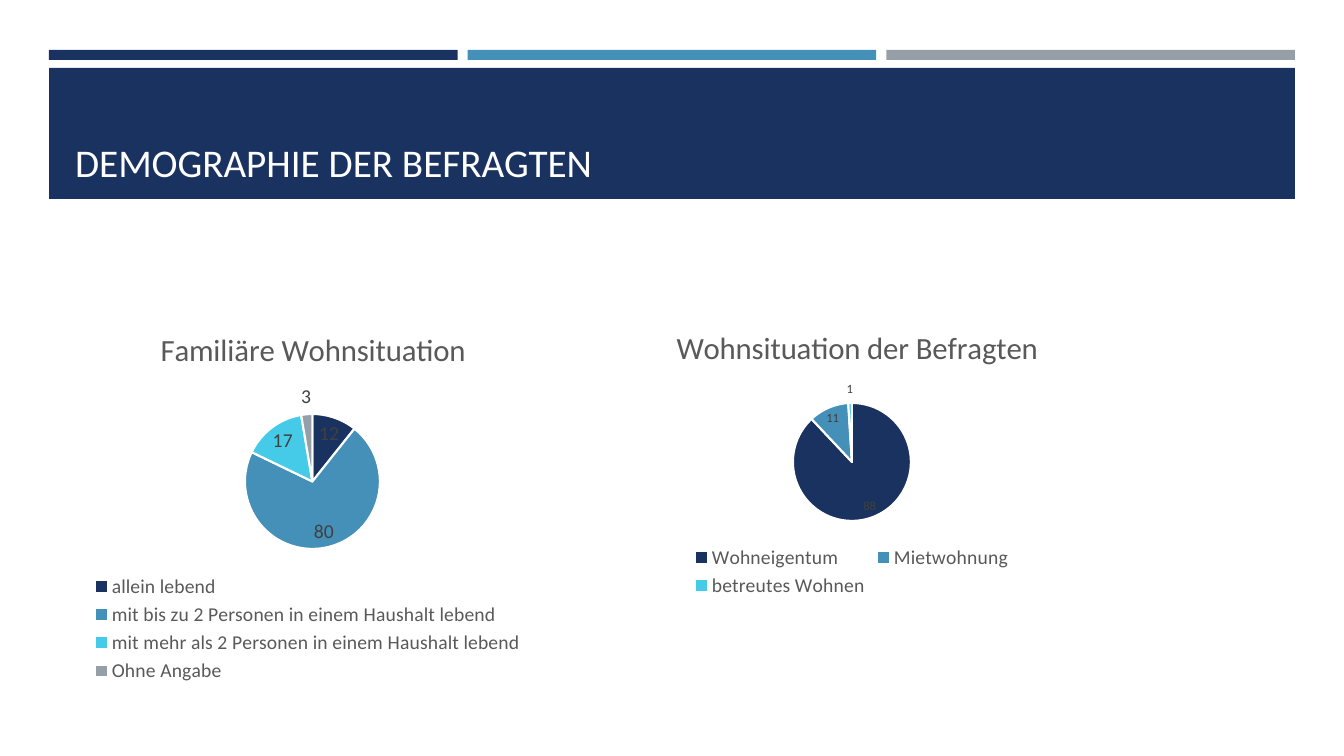
import pptx
import pptx.chart.data
import pptx.dml.color
import pptx.enum.chart
import pptx.enum.shapes
import pptx.enum.text
import pptx.oxml
import pptx.oxml.ns
import pptx.util

EMU_PER_PX = 914400 / 100.8
FONT = "Calibri"
NAVY, BLUE, CYAN, GREY = "1A3260", "4590B8", "45CBE8", "969FA7"
WHITE, TEXT_GREY, LABEL_GREY = "FFFFFF", "595959", "404040"


def px(length):
    """Turn a length in px into EMU."""
    return pptx.util.Emu(round(length * EMU_PER_PX))


def colour(hex_string):
    """Turn a hex string into a colour."""
    return pptx.dml.color.RGBColor.from_string(hex_string)


def style_font(font, size, hex_string):
    """Set typeface, size and colour of a font."""
    font.name = FONT
    font.size = pptx.util.Pt(size)
    font.bold = False
    font.color.rgb = colour(hex_string)


def add_bar(slide, left, top, width, height, fill):
    """Add a plain filled rectangle."""
    shape = slide.shapes.add_shape(
        pptx.enum.shapes.MSO_SHAPE.RECTANGLE, px(left), px(top), px(width), px(height))
    shape.shadow.inherit = False
    shape.fill.solid()
    shape.fill.fore_color.rgb = colour(fill)
    shape.line.fill.background()


def add_header(slide, left, top, width, text):
    """Add three accent bars over a title band."""
    gap, bar_height, band_top, band_height = 10, 10, top + 18, 131
    bar_width = (width - 2 * gap) / 3
    for index, fill in enumerate((NAVY, BLUE, GREY)):
        add_bar(slide, left + index * (bar_width + gap), top, bar_width, bar_height, fill)
    add_bar(slide, left, band_top, width, band_height, NAVY)

    title = slide.shapes.title
    title.left, title.top = px(left + 16), px(band_top + 10)
    title.width, title.height = px(width - 32), px(band_height - 19)
    slide.shapes._spTree.append(title._element)
    frame = title.text_frame
    frame.text = text
    frame.word_wrap = True
    frame.vertical_anchor = pptx.enum.text.MSO_ANCHOR.BOTTOM
    paragraph = frame.paragraphs[0]
    paragraph.alignment = pptx.enum.text.PP_ALIGN.LEFT
    style_font(paragraph.font, 28, WHITE)


def set_layout(parent, position, inner=False, **fractions):
    """Place a chart part by fractions of the chart box."""
    for old in parent.findall(pptx.oxml.ns.qn("c:layout")):
        parent.remove(old)
    settings = [("layoutTarget", "inner")] if inner else []
    settings += [("xMode", "edge"), ("yMode", "edge")]
    settings += [(name, round(value, 4)) for name, value in fractions.items()]
    children = "".join(f'<c:{name} val="{value}"/>' for name, value in settings)
    parent.insert(position, pptx.oxml.parse_xml(
        f'<c:layout {pptx.oxml.ns.nsdecls("c")}><c:manualLayout>'
        f'{children}</c:manualLayout></c:layout>'))


def add_pie(slide, box, heading, heading_at, pie_at, diameter, slices, label_size):
    """Add a titled pie with a legend below, parts placed relative to its box."""
    left, top, width, height = box
    data = pptx.chart.data.CategoryChartData()
    data.categories = [name for name, value, fill in slices]
    data.add_series("Series 1", [value for name, value, fill in slices])
    chart = slide.shapes.add_chart(
        pptx.enum.chart.XL_CHART_TYPE.PIE,
        px(left), px(top), px(width), px(height), data).chart
    style_font(chart.font, 14, TEXT_GREY)

    chart.has_title = True
    chart.chart_title.text_frame.text = heading
    style_font(chart.chart_title.text_frame.paragraphs[0].font, 22, TEXT_GREY)
    set_layout(chart.chart_title._element, 1,
               x=heading_at[0] / width, y=heading_at[1] / height)
    set_layout(chart._chartSpace.chart.plotArea, 0, inner=True,
               x=pie_at[0] / width, y=pie_at[1] / height,
               w=diameter / width, h=diameter / height)

    chart.has_legend = True
    chart.legend.position = pptx.enum.chart.XL_LEGEND_POSITION.BOTTOM
    chart.legend.include_in_layout = False
    style_font(chart.legend.font, 14, TEXT_GREY)

    plot = chart.plots[0]
    plot.vary_by_categories = True
    for index, (name, value, fill) in enumerate(slices):
        point_format = plot.series[0].points[index].format
        point_format.fill.solid()
        point_format.fill.fore_color.rgb = colour(fill)
        point_format.line.color.rgb = colour(WHITE)
        point_format.line.width = pptx.util.Pt(1.5)
    labels = plot.series[0].data_labels
    labels.show_value = True
    labels.position = pptx.enum.chart.XL_LABEL_POSITION.BEST_FIT
    style_font(labels.font, label_size, LABEL_GREY)


def build_slide(presentation):
    """Build the slide with its header and two pies."""
    slide = presentation.slides.add_slide(presentation.slide_layouts[5])
    add_header(slide, 49, 50, 1246, "DEMOGRAPHIE DER BEFRAGTEN")
    add_pie(slide, (56, 300, 504, 387), "Familiäre Wohnsituation",
            (99, 23), (189, 114), 135,
            [("allein lebend", 12, NAVY),
             ("mit bis zu 2 Personen in einem Haushalt lebend", 80, BLUE),
             ("mit mehr als 2 Personen in einem Haushalt lebend", 17, CYAN),
             ("Ohne Angabe", 3, GREY)], 14)
    add_pie(slide, (600, 300, 504, 302), "Wohnsituation der Befragten",
            (71, 21), (193, 103), 118,
            [("Wohneigentum", 88, NAVY),
             ("Mietwohnung", 11, BLUE),
             ("betreutes Wohnen", 1, CYAN)], 9)


def main():
    """Create and save the presentation."""
    presentation = pptx.Presentation()
    presentation.slide_width, presentation.slide_height = px(1344), px(756)
    build_slide(presentation)
    presentation.save("out.pptx")


if __name__ == "__main__":
    main()
